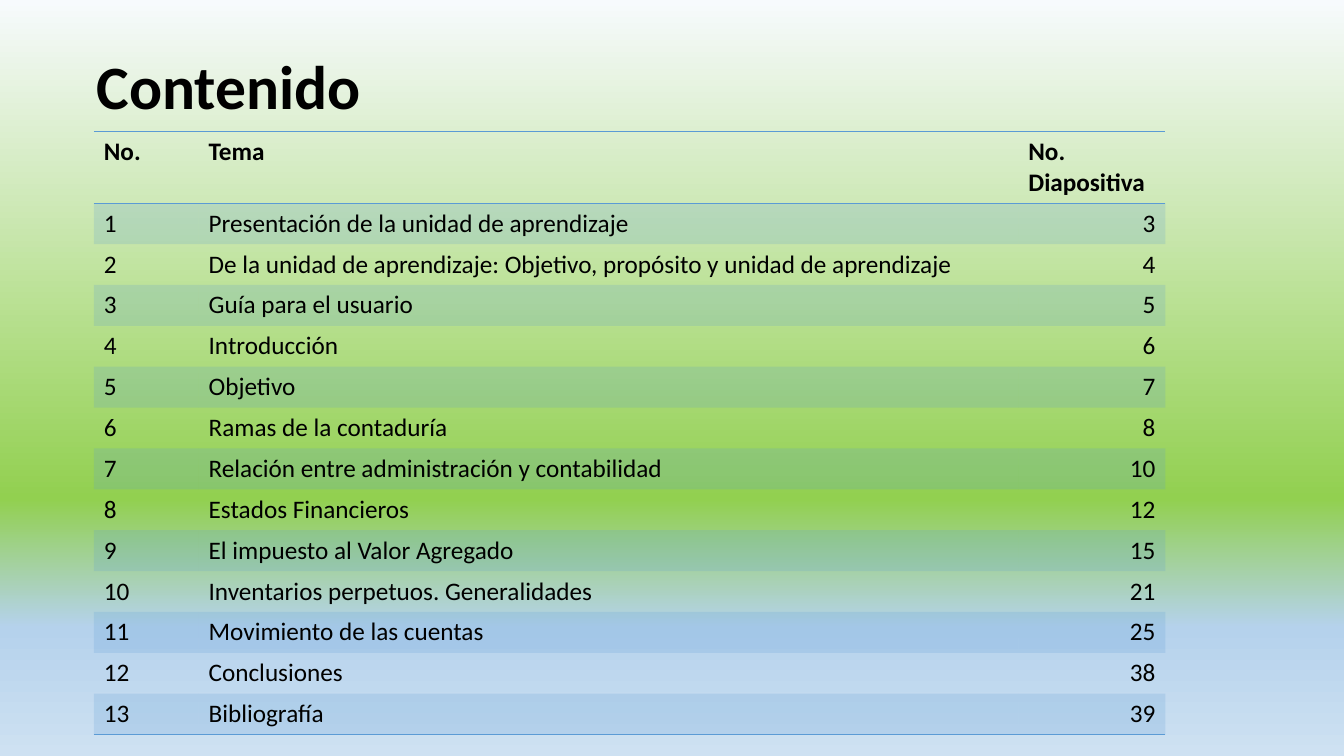
import copy
from dataclasses import dataclass

import lxml.etree
import pptx
import pptx.dml.color
import pptx.enum.text
import pptx.oxml.ns
import pptx.slide
import pptx.table
import pptx.util

ALIGN = pptx.enum.text.PP_ALIGN
qn = pptx.oxml.ns.qn


@dataclass(frozen=True)
class Theme:
    font: str = "Calibri"
    ink: str = "000000"
    accent: str = "5B9BD5"
    band_opacity: int = 20
    title_size: int = 44
    table_size: int = 18
    rule_width: int = 1
    sky: tuple = ((0, "F7FAFD"), (0.66, "92D050"), (0.83, "B5D2EC"), (1, "CEE1F2"))


@dataclass(frozen=True)
class Topic:
    name: str
    page: int


@dataclass(frozen=True)
class Column:
    heading: str
    width: float  # percent of the slide's width
    align: ALIGN


THEME = Theme()
SLIDE_WIDTH = pptx.util.Inches(13.33)
SLIDE_HEIGHT = pptx.util.Inches(7.5)
HEADER_HEIGHT, TOPIC_HEIGHT = 9.4, 5.4  # percent of the slide's height
NO_STYLE = "{2D5ABB26-0587-4C30-8999-92F81FD0307C}"

COLUMNS = [
    Column("No.", 7.8, ALIGN.LEFT),
    Column("Tema", 60.99, ALIGN.LEFT),
    Column("No. Diapositiva", 10.95, ALIGN.RIGHT),
]
TOPICS = [
    Topic("Presentación de la unidad de aprendizaje", 3),
    Topic("De la unidad de aprendizaje: Objetivo, propósito y unidad de aprendizaje", 4),
    Topic("Guía para el usuario", 5),
    Topic("Introducción", 6),
    Topic("Objetivo", 7),
    Topic("Ramas de la contaduría", 8),
    Topic("Relación entre administración y contabilidad", 10),
    Topic("Estados Financieros", 12),
    Topic("El impuesto al Valor Agregado", 15),
    Topic("Inventarios perpetuos. Generalidades", 21),
    Topic("Movimiento de las cuentas", 25),
    Topic("Conclusiones", 38),
    Topic("Bibliografía", 39),
]


def across(percent: float) -> int:
    return round(SLIDE_WIDTH * percent / 100)


def down(percent: float) -> int:
    return round(SLIDE_HEIGHT * percent / 100)


def rgb(code: str) -> pptx.dml.color.RGBColor:
    return pptx.dml.color.RGBColor.from_string(code)


def format_text(frame, size: int, bold: bool, align: ALIGN) -> None:
    paragraph = frame.paragraphs[0]
    paragraph.alignment = align
    font = paragraph.runs[0].font
    font.name, font.size, font.bold = THEME.font, pptx.util.Pt(size), bold
    font.color.rgb = rgb(THEME.ink)


def paint_background(slide: pptx.slide.Slide) -> None:
    fill = slide.background.fill
    fill.gradient()
    fill.gradient_angle = 270
    stop_list = slide.element.find(".//" + qn("a:gsLst"))
    while len(stop_list) < len(THEME.sky):
        stop_list.append(copy.deepcopy(stop_list[0]))
    for stop, (position, color) in zip(fill.gradient_stops, THEME.sky):
        stop.position = position
        stop.color.rgb = rgb(color)


def write_title(slide: pptx.slide.Slide, text: str) -> None:
    title = slide.shapes.title
    title.left, title.top = across(6.45), down(2.13)
    title.width, title.height = across(86.27), down(19.33)
    frame = title.text_frame
    frame.text = text
    frame.vertical_anchor = pptx.enum.text.MSO_ANCHOR.MIDDLE
    frame.paragraphs[0].line_spacing = 0.9
    format_text(frame, THEME.title_size, True, ALIGN.LEFT)


def rule_cell(cell: pptx.table._Cell, edge: str) -> None:
    properties = cell._tc.get_or_add_tcPr()
    line = lxml.etree.SubElement(
        properties, qn("a:" + edge), w=str(pptx.util.Pt(THEME.rule_width)))
    solid = lxml.etree.SubElement(line, qn("a:solidFill"))
    lxml.etree.SubElement(solid, qn("a:srgbClr"), val=THEME.accent)


def fill_cell(cell: pptx.table._Cell, banded: bool) -> None:
    if not banded:
        cell.fill.background()
        return
    cell.fill.solid()
    cell.fill.fore_color.rgb = rgb(THEME.accent)
    color = cell._tc.tcPr.find(qn("a:solidFill") + "/" + qn("a:srgbClr"))
    lxml.etree.SubElement(color, qn("a:alpha"), val=str(THEME.band_opacity * 1000))


def draw_contents(slide: pptx.slide.Slide) -> None:
    rows = [[column.heading for column in COLUMNS]]
    rows += [[str(number), topic.name, str(topic.page)]
             for number, topic in enumerate(TOPICS, 1)]
    contents = slide.shapes.add_table(
        len(rows), len(COLUMNS), across(6.98), down(17.4),
        across(sum(column.width for column in COLUMNS)),
        down(HEADER_HEIGHT + TOPIC_HEIGHT * len(TOPICS))).table
    contents._tbl.tblPr.find(qn("a:tableStyleId")).text = NO_STYLE

    for index, column in enumerate(COLUMNS):
        contents.columns[index].width = across(column.width)
    for row, texts in enumerate(rows):
        heading = row == 0
        contents.rows[row].height = down(HEADER_HEIGHT if heading else TOPIC_HEIGHT)
        for index, text in enumerate(texts):
            cell = contents.cell(row, index)
            cell.text_frame.text = text
            align = ALIGN.LEFT if heading else COLUMNS[index].align
            format_text(cell.text_frame, THEME.table_size, heading, align)
            # Borders precede the fill in the cell's properties
            if heading:
                rule_cell(cell, "lnT")
            if heading or row == len(TOPICS):
                rule_cell(cell, "lnB")
            fill_cell(cell, row % 2 == 1)


def main() -> None:
    deck = pptx.Presentation()
    deck.slide_width, deck.slide_height = SLIDE_WIDTH, SLIDE_HEIGHT
    slide = deck.slides.add_slide(deck.slide_layouts.get_by_name("Title Only"))
    # Background and title
    paint_background(slide)
    write_title(slide, "Contenido")
    # Table of contents
    draw_contents(slide)
    deck.save("out.pptx")


if __name__ == "__main__":
    main()
